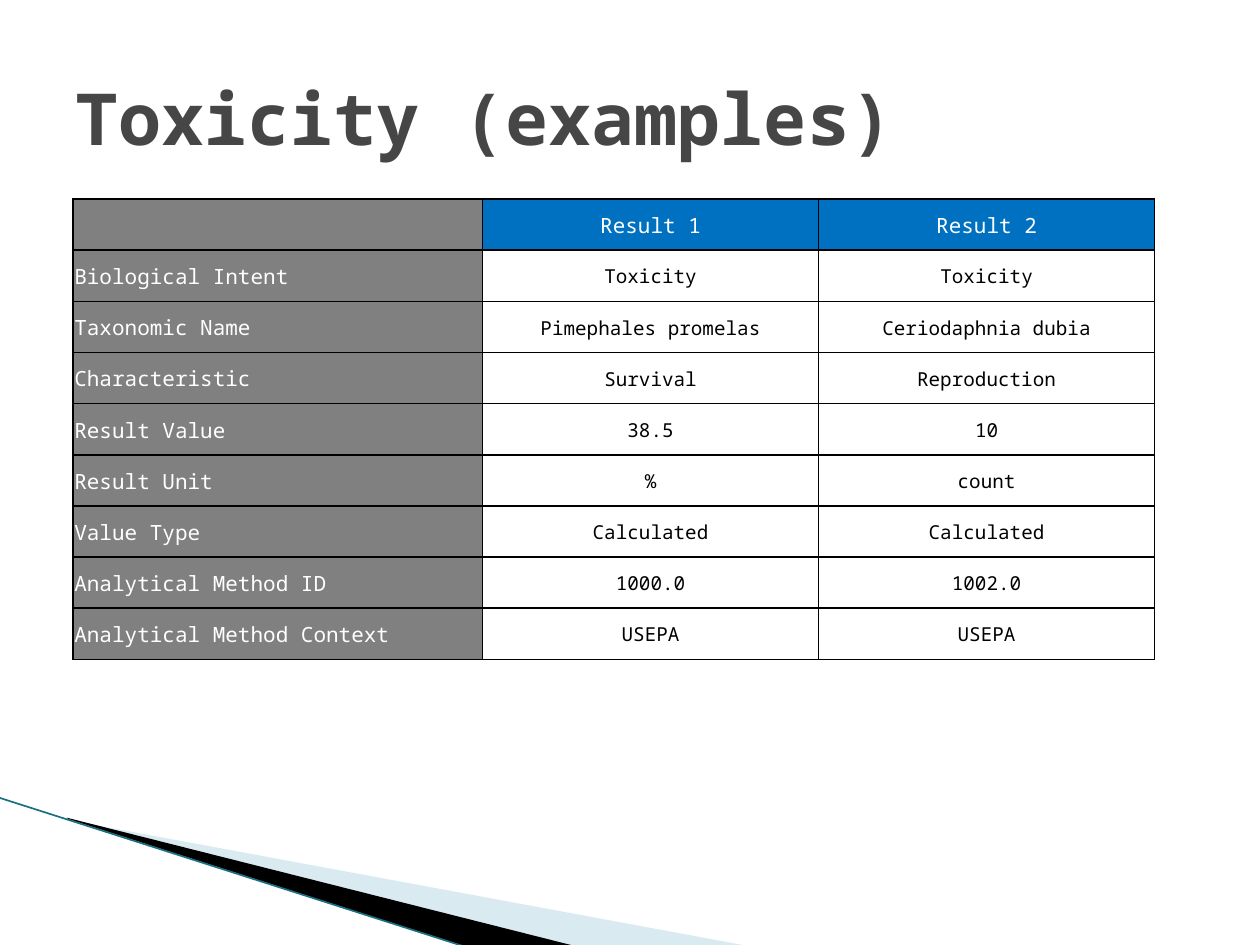
from lxml.etree import SubElement
from pptx import Presentation
from pptx.dml.color import RGBColor
from pptx.enum.text import MSO_ANCHOR, PP_ALIGN
from pptx.oxml.ns import qn
from pptx.util import Inches, Pt


def rgb(value):
    return RGBColor.from_string(value)


class Deck:
    """Holds the style and the current slide, on a grid of 100 columns by 75 rows."""

    FONT = "Noto Sans Mono"
    WHITE, BLACK, GREY, BLUE = "FFFFFF", "000000", "808080", "0070C0"
    TITLE, PALE, TEAL = "464646", "A0CBDC", "1B6F82"

    def __init__(self):
        self.prs = Presentation()
        self.prs.slide_width, self.prs.slide_height = Inches(10), Inches(7.5)
        self.s = self.prs.slides.add_slide(self.prs.slide_layouts[6])

    def col(self, n):
        return round(self.prs.slide_width * n / 100)

    def row(self, n):
        return round(self.prs.slide_height * n / 75)

    def box(self, x, y, w, h):
        return self.col(x), self.row(y), self.col(w), self.row(h)

    def run(self, p, text, size, color, bold=False):
        r = p.add_run()
        r.text = text
        r.font.name, r.font.size, r.font.bold = self.FONT, Pt(size), bold
        r.font.color.rgb = rgb(color)

    def title(self, text, *area):
        sp = self.s.shapes.add_textbox(*self.box(*area))
        tf = sp.text_frame
        tf.word_wrap, tf.vertical_anchor = True, MSO_ANCHOR.MIDDLE
        self.run(tf.paragraphs[0], text, 41, self.TITLE, True)

    def wedge(self, points, color, alpha=100):
        start, *rest = [(self.col(x), self.row(y)) for x, y in points]
        fb = self.s.shapes.build_freeform(*start)
        fb.add_line_segments(rest, close=True)
        sp = fb.convert_to_shape()
        sp.shadow.inherit = False
        sp.line.fill.background()
        sp.fill.solid()
        sp.fill.fore_color.rgb = rgb(color)
        if alpha < 100:
            clr = sp.fill._xPr.find(".//" + qn("a:srgbClr"))
            SubElement(clr, qn("a:alpha"), val=str(alpha * 1000))

    def line(self, x1, y1, x2, y2, color, width):
        ends = self.col(x1), self.row(y1), self.col(x2), self.row(y2)
        cx = self.s.shapes.add_connector(1, *ends)
        cx.line.color.rgb, cx.line.width = rgb(color), Pt(width)
        SubElement(cx._element.spPr, qn("a:effectLst"))

    def borders(self, cell):
        tcPr = cell._tc.get_or_add_tcPr()
        for side in ("lnL", "lnR", "lnT", "lnB"):
            ln = SubElement(tcPr, qn("a:" + side), w=str(Pt(1)))
            SubElement(SubElement(ln, qn("a:solidFill")), qn("a:srgbClr"), val=self.BLACK)

    def cell(self, cell, text, size, color, fill, align):
        self.borders(cell)
        cell.margin_left = cell.margin_right = cell.margin_top = Inches(0.01)
        cell.margin_bottom = 0
        cell.vertical_anchor = MSO_ANCHOR.MIDDLE
        if fill:
            cell.fill.solid()
            cell.fill.fore_color.rgb = rgb(fill)
        else:
            cell.fill.background()
        p = cell.text_frame.paragraphs[0]
        p.alignment = align
        if text:
            self.run(p, text, size, color)

    def table(self, data, x, y, widths, row_height):
        area = self.box(x, y, sum(widths), row_height * len(data))
        tbl = self.s.shapes.add_table(len(data), len(widths), *area).table
        tbl.first_row = tbl.horz_banding = False
        for column, width in zip(tbl.columns, widths):
            column.width = self.col(width)
        for i, values in enumerate(data):
            tbl.rows[i].height = self.row(row_height)
            for j, text in enumerate(values):
                if j == 0:
                    look = 12, self.WHITE, self.GREY, PP_ALIGN.LEFT
                elif i == 0:
                    look = 12, self.WHITE, self.BLUE, PP_ALIGN.CENTER
                else:
                    look = 11, self.BLACK, None, PP_ALIGN.CENTER
                self.cell(tbl.cell(i, j), text, *look)


RESULTS = [
    ("", "Result 1", "Result 2"),
    ("Biological Intent", "Toxicity", "Toxicity"),
    ("Taxonomic Name", "Pimephales promelas", "Ceriodaphnia dubia"),
    ("Characteristic", "Survival", "Reproduction"),
    ("Result Value", "38.5", "10"),
    ("Result Unit", "%", "count"),
    ("Value Type", "Calculated", "Calculated"),
    ("Analytical Method ID", "1000.0", "1002.0"),
    ("Analytical Method Context", "USEPA", "USEPA"),
]


def main():
    deck = Deck()
    deck.wedge([(5.5, 65.1), (59.5, 75.1), (45.6, 75.1), (5.5, 65)], deck.PALE, 40)
    deck.wedge([(5.3, 64.9), (45.7, 75.1), (37.2, 75.2), (5.4, 65)], deck.BLACK)
    deck.line(-0.1, 63.3, 37.1, 75.2, deck.TEAL, 0.95)
    deck.title("Toxicity (examples)", 5, 3, 90, 12.5)
    deck.table(RESULTS, 5.8, 15.8, (32.5, 26.67, 26.67), 4.06)
    deck.prs.save("out.pptx")


if __name__ == "__main__":
    main()
